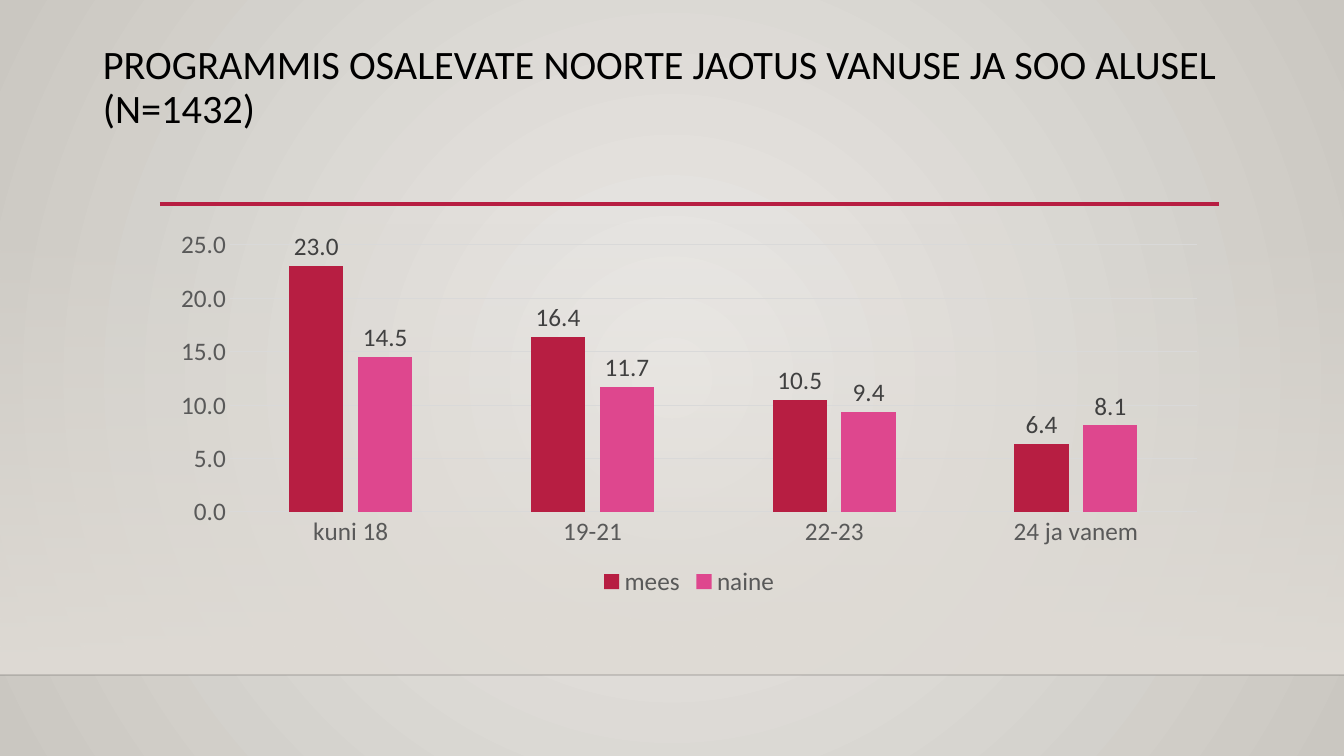
"""Build the slide showing programme participants by age and gender."""
from lxml import etree
from pptx import Presentation
from pptx.chart.data import CategoryChartData
from pptx.dml.color import RGBColor
from pptx.enum.chart import XL_CHART_TYPE, XL_LABEL_POSITION, XL_LEGEND_POSITION, XL_TICK_MARK
from pptx.enum.shapes import MSO_CONNECTOR, MSO_SHAPE
from pptx.enum.text import MSO_ANCHOR
from pptx.oxml.ns import qn
from pptx.util import Pt

COLUMNS = XL_CHART_TYPE.COLUMN_CLUSTERED
OUTSIDE = XL_LABEL_POSITION.OUTSIDE_END
BOTTOM = XL_LEGEND_POSITION.BOTTOM
NO_TICK = XL_TICK_MARK.NONE
STRAIGHT = MSO_CONNECTOR.STRAIGHT
RECTANGLE = MSO_SHAPE.RECTANGLE
TOP = MSO_ANCHOR.TOP

HEADING = "PROGRAMMIS OSALEVATE NOORTE JAOTUS VANUSE JA SOO ALUSEL (N=1432)"
AGES = ["kuni 18", "19-21", "22-23", "24 ja vanem"]
SHARES = {"mees": [23.0, 16.4, 10.5, 6.4], "naine": [14.5, 11.7, 9.4, 8.1]}

THEME = {
    "font": "Calibri", "heading_size": 28.8, "chart_size": 18,
    "heading": "000000", "axis_text": "595959", "label_text": "404040",
    "grid": "D9D9D9", "accent": "B71E42", "floor_edge": "000001",
    "backdrop": ("ECEAE7", "CAC7C1"), "wall": ("DFDBD5", "DFDBD5"),
    "series": ("B71E42", "DE478E"),
}

PX = 914400 / 100.8
WIDTH, HEIGHT = 1344, 756
WALL_TOP, FLOOR = 223, 675
HEADING_BOX = (93, 40, 1159, 79)
RULE_LEFT, RULE_RIGHT, RULE_Y = 160, 1219, 204
CHART_BOX = (160, 222, 1058, 380)


def emu(*lengths):
    return [round(length * PX) for length in lengths]


def rgb(name):
    return RGBColor.from_string(THEME.get(name, name))


def style_font(font, size, color):
    font.name, font.size = THEME["font"], Pt(THEME[size])
    font.color.rgb = rgb(color)


def style_line(line, color, width):
    line.color.rgb = rgb(color)
    line.width = Pt(width)


def set_gradient(fill, colors):
    fill.gradient()
    for stop, color in zip(fill.gradient_stops, colors):
        stop.color.rgb = rgb(color)


def set_opacity(element, percent):
    color = next(element.iter(qn("a:srgbClr")))
    etree.SubElement(color, qn("a:alpha"), val=str(percent * 1000))


def add_backdrop(slide):
    set_gradient(slide.background.fill, THEME["backdrop"])
    linear = next(slide._element.iter(qn("a:lin")))
    radial = etree.Element(qn("a:path"), path="circle")
    etree.SubElement(radial, qn("a:fillToRect"), l="50000", t="50000", r="50000", b="50000")
    linear.getparent().replace(linear, radial)

    wall = slide.shapes.add_shape(RECTANGLE, *emu(0, WALL_TOP, WIDTH, FLOOR - WALL_TOP))
    wall.shadow.inherit = False
    wall.line.fill.background()
    set_gradient(wall.fill, THEME["wall"])
    wall.fill.gradient_angle = 270
    set_opacity(wall._element.spPr, 0)


def add_rule(slide, left, right, y, color, width):
    rule = slide.shapes.add_connector(STRAIGHT, *emu(left, y, right, y))
    style_line(rule.line, color, width)
    etree.SubElement(rule._element.spPr, qn("a:effectLst"))
    return rule


def add_heading(slide):
    frame = slide.shapes.add_textbox(*emu(*HEADING_BOX)).text_frame
    frame.word_wrap = True
    frame.vertical_anchor = TOP
    heading = frame.paragraphs[0]
    heading.text = HEADING
    heading.line_spacing = 0.9
    style_font(heading.font, "heading_size", "heading")


def add_share_chart(slide):
    shares = CategoryChartData(number_format="0.0")
    shares.categories = AGES
    for gender, values in SHARES.items():
        shares.add_series(gender, values)
    chart = slide.shapes.add_chart(COLUMNS, *emu(*CHART_BOX), shares).chart
    style_font(chart.font, "chart_size", "heading")
    chart.has_title = False
    chart.has_legend = True
    chart.legend.position = BOTTOM
    chart.legend.include_in_layout = False
    style_font(chart.legend.font, "chart_size", "axis_text")

    ages, scale = chart.category_axis, chart.value_axis
    for axis in (ages, scale):
        axis.major_tick_mark = axis.minor_tick_mark = NO_TICK
        style_font(axis.tick_labels.font, "chart_size", "axis_text")
    style_line(ages.format.line, "grid", 0.75)
    scale.format.line.fill.background()
    style_line(scale.major_gridlines.format.line, "grid", 0.75)
    scale.minimum_scale, scale.maximum_scale, scale.major_unit = 0, 25, 5
    scale.tick_labels.number_format = "0.0"
    scale.tick_labels.number_format_is_linked = False

    plot = chart.plots[0]
    plot.gap_width, plot.overlap, plot.vary_by_categories = 219, -27, False
    for gender, color in zip(plot.series, THEME["series"]):
        gender.format.fill.solid()
        gender.format.fill.fore_color.rgb = rgb(color)
        labels = gender.data_labels
        labels.show_value = True
        labels.position = OUTSIDE
        labels.number_format = "0.0"
        labels.number_format_is_linked = False
        style_font(labels.font, "chart_size", "label_text")


def main():
    deck = Presentation()
    deck.slide_width, deck.slide_height = emu(WIDTH, HEIGHT)
    slide = deck.slides.add_slide(deck.slide_layouts[6])
    add_backdrop(slide)
    floor_edge = add_rule(slide, 0, WIDTH, FLOOR, "floor_edge", 1)
    set_opacity(floor_edge._element.spPr, 20)
    add_rule(slide, RULE_LEFT, RULE_RIGHT, RULE_Y, "accent", 2.5)
    add_heading(slide)
    add_share_chart(slide)
    deck.save("out.pptx")


if __name__ == "__main__":
    main()
